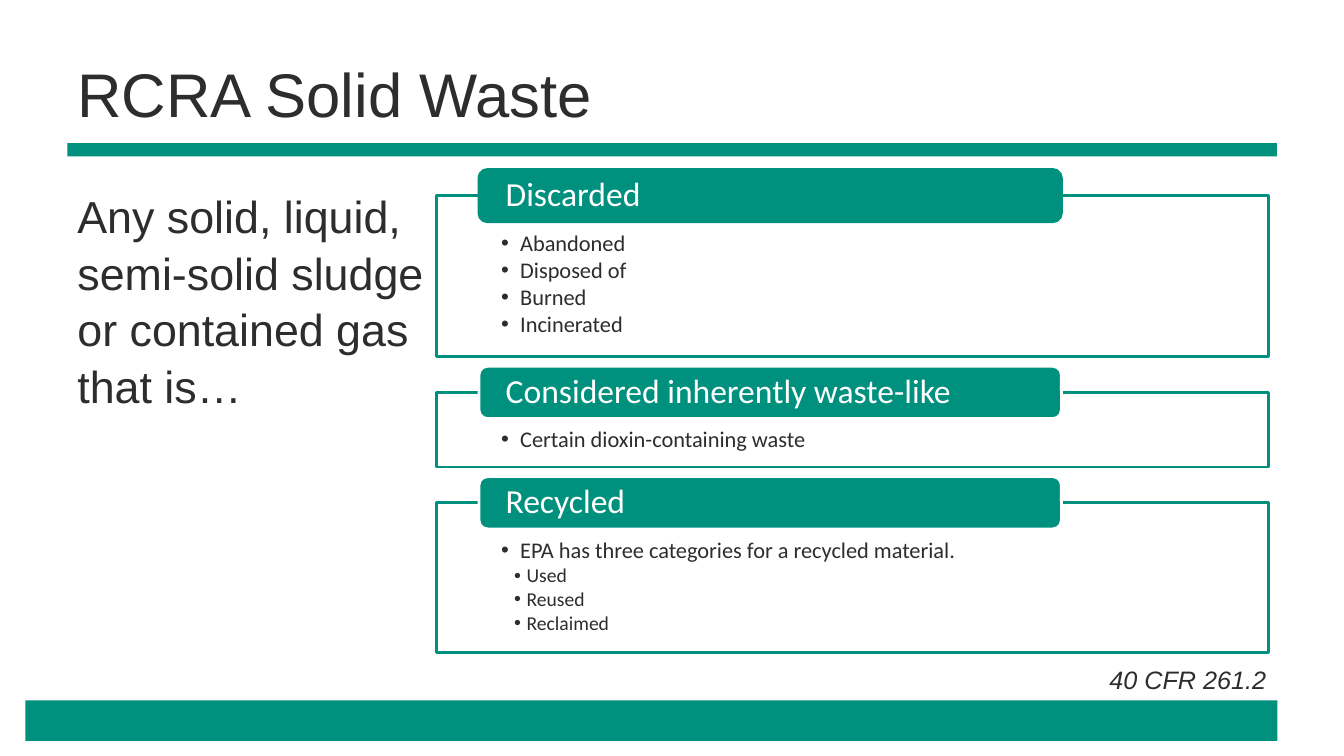
from dataclasses import dataclass

from lxml.etree import SubElement
from pptx import Presentation
from pptx.dml.color import RGBColor
from pptx.enum.shapes import MSO_SHAPE as Preset
from pptx.enum.text import MSO_ANCHOR as Anchor, MSO_AUTO_SIZE as AutoSize, PP_ALIGN as Align
from pptx.oxml.ns import qn
from pptx.shapes.autoshape import Shape
from pptx.slide import Slide
from pptx.text.text import TextFrame
from pptx.util import Cm, Pt

GREEN = RGBColor(0x00, 0x90, 0x7E)
DARK = RGBColor(0x2D, 0x2D, 0x2D)
WHITE = RGBColor(0xFF, 0xFF, 0xFF)

PANEL_LEFT, PANEL_TOP, PANEL_WIDTH, PANEL_GAP = 11, 4.93, 20.96, 0.9
TAB_LEFT, TAB_WIDTH, TAB_HEIGHT = 12.07, 14.68, 1.32


@dataclass(frozen=True)
class BulletLevel:
    size: float
    margin: float
    hanging: float


@dataclass(frozen=True)
class Panel:
    heading: str
    bullets: tuple[str, ...]
    height: float
    sub_bullets: tuple[str, ...] = ()
    tab_line: RGBColor = WHITE


MAIN_BULLET = BulletLevel(size=16, margin=0.48, hanging=0.48)
SUB_BULLET = BulletLevel(size=14, margin=0.64, hanging=0.31)

PANELS = (
    Panel("Discarded", ("Abandoned", "Disposed of", "Burned", "Incinerated"), 4.06, tab_line=GREEN),
    Panel("Considered inherently waste-like", ("Certain\u00a0dioxin-containing\u00a0waste",), 1.88),
    Panel("Recycled", ("EPA has three categories for a recycled material.",), 3.78,
          sub_bullets=("Used", "Reused", "Reclaimed")),
)


def place(shape: Shape, left: float, top: float, width: float, height: float) -> None:
    shape.left, shape.top = Cm(left), Cm(top)
    shape.width, shape.height = Cm(width), Cm(height)


def set_frame(frame: TextFrame, *, anchor: Anchor = Anchor.TOP,
              insets: tuple[float, float, float, float] = (0.25, 0.13, 0.25, 0.13)) -> None:
    """Set wrapping, anchor and the left, top, right and bottom insets."""
    frame.word_wrap = True
    frame.auto_size = AutoSize.NONE
    frame.vertical_anchor = anchor
    frame.margin_left, frame.margin_top, frame.margin_right, frame.margin_bottom = map(Cm, insets)


def add_text(frame: TextFrame, text: str, *, size: float, font: str = "Arial",
             color: RGBColor = DARK, italic: bool = False, align: Align = Align.LEFT,
             line_spacing: float = 1.0, space_after: float = 0,
             bullet: BulletLevel | None = None) -> None:
    """Write a paragraph, using the first one while it is still empty."""
    first = frame.paragraphs[0]
    paragraph = frame.add_paragraph() if first.runs else first
    properties = paragraph._p.get_or_add_pPr()
    properties.set("marL", str(Cm(bullet.margin) if bullet else 0))
    properties.set("indent", str(-Cm(bullet.hanging) if bullet else 0))
    if bullet:
        SubElement(properties, qn("a:buFont"), typeface="Arial")
        SubElement(properties, qn("a:buChar"), char="•")
    else:
        SubElement(properties, qn("a:buNone"))
    paragraph.alignment = align
    paragraph.line_spacing = line_spacing
    paragraph.space_before = Pt(0)
    paragraph.space_after = Pt(space_after)
    run = paragraph.add_run()
    run.text = text
    run.font.size, run.font.name = Pt(size), font
    run.font.italic = italic
    run.font.color.rgb = color


def add_box(slide: Slide, preset: Preset, left: float, top: float, width: float, height: float,
            *, fill: RGBColor, line: RGBColor | None = None) -> Shape:
    shape = slide.shapes.add_shape(preset, Cm(left), Cm(top), Cm(width), Cm(height))
    shape.shadow.inherit = False
    shape.fill.solid()
    shape.fill.fore_color.rgb = fill
    if line is None:
        shape.line.fill.background()
    else:
        shape.line.color.rgb = line
        shape.line.width = Pt(2)
    return shape


def add_panel(slide: Slide, panel: Panel, top: float) -> None:
    """Draw a bordered bullet list with its heading tab over the top edge."""
    box = add_box(slide, Preset.RECTANGLE, PANEL_LEFT, top, PANEL_WIDTH, panel.height,
                  fill=WHITE, line=GREEN)
    fill_color = box._element.spPr.find(qn("a:solidFill"))[0]
    SubElement(fill_color, qn("a:alpha"), val="90000")
    set_frame(box.text_frame, insets=(1.63, 0.91, 1.63, 0.3))
    for level, items in ((MAIN_BULLET, panel.bullets), (SUB_BULLET, panel.sub_bullets)):
        for item in items:
            add_text(box.text_frame, item, size=level.size, font="Calibri", line_spacing=0.9,
                     space_after=round(level.size * 0.13, 1), bullet=level)

    tab = add_box(slide, Preset.ROUNDED_RECTANGLE, TAB_LEFT, top - TAB_HEIGHT / 2,
                  TAB_WIDTH, TAB_HEIGHT, fill=GREEN, line=panel.tab_line)
    set_frame(tab.text_frame, anchor=Anchor.MIDDLE, insets=(0.61, 0, 0.61, 0))
    add_text(tab.text_frame, panel.heading, size=24, font="Calibri", color=WHITE, line_spacing=0.9)


def main() -> None:
    presentation = Presentation()
    presentation.slide_width, presentation.slide_height = Cm(33.87), Cm(19.05)
    slide = presentation.slides.add_slide(presentation.slide_layouts[1])

    add_box(slide, Preset.RECTANGLE, 0.64, 17.65, 31.55, 1.02, fill=GREEN)
    add_box(slide, Preset.RECTANGLE, 1.7, 3.61, 30.48, 0.33, fill=GREEN)

    title = slide.shapes.title
    place(title, 1.7, 0.76, 30.48, 3.18)
    set_frame(title.text_frame, anchor=Anchor.MIDDLE)
    add_text(title.text_frame, "RCRA Solid Waste", size=44)

    body = slide.placeholders[1]
    place(body, 1.7, 4.57, 9.32, 6.65)
    set_frame(body.text_frame)
    add_text(body.text_frame, "Any solid, liquid, semi-solid sludge or contained gas that is…",
             size=32, line_spacing=1.05)

    citation = slide.shapes.add_textbox(Cm(27.66), Cm(16.61), Cm(4.5), Cm(1.02))
    set_frame(citation.text_frame)
    add_text(citation.text_frame, "40 CFR 261.2", size=18, italic=True, align=Align.RIGHT)

    top = PANEL_TOP
    for panel in PANELS:
        add_panel(slide, panel, top)
        top += panel.height + PANEL_GAP

    presentation.save("out.pptx")


if __name__ == "__main__":
    main()
